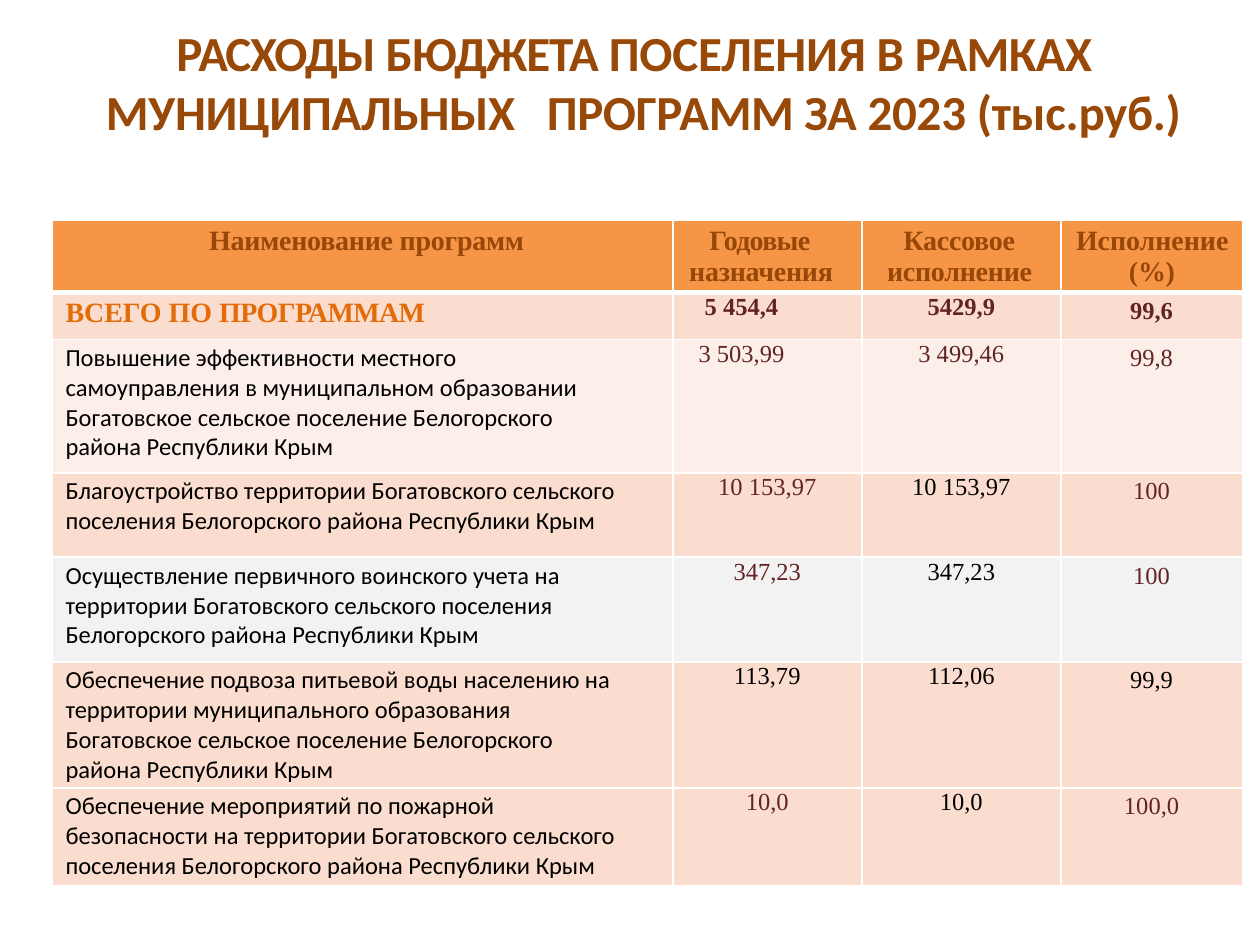
from dataclasses import dataclass

from lxml.etree import SubElement
from pptx import Presentation
from pptx.dml.color import RGBColor
from pptx.enum.text import MSO_ANCHOR, MSO_AUTO_SIZE, PP_ALIGN
from pptx.oxml.ns import qn
from pptx.util import Inches, Pt

GRID_UNIT = 0.1
SERIF, SANS = "Times New Roman", "Calibri"
BROWN, WINE, ORANGE, BLACK, WHITE = "974707", "622422", "E36C09", "000000", "FFFFFF"
HEADER_FILL, PEACH, PALE_PEACH, GRAY = "F79546", "FBDDCF", "FCEEE9", "F2F2F2"
COLUMNS = (49.2, 15, 15.8, 14.4)
HEADER_HEIGHT = 3.2


@dataclass
class Piece:
    text: str
    spacing: float = 0


@dataclass
class Style:
    font: str
    size: float
    color: str
    bold: bool = False


@dataclass
class Heading:
    pieces: list[Piece]
    left: float
    first_line: float


@dataclass
class Program:
    name: str
    amounts: tuple[str, str, str]
    colors: tuple[str, str, str]
    height: float
    fill: str = PEACH
    plan_margin: float = 0
    total: bool = False


HEADINGS = [
    Heading([Piece("Наименование программ", -0.1)], 12.4, 0),
    Heading([Piece("Годовые ", -0.4), Piece("назначения", -0.1)], 1.3, 1.6),
    Heading([Piece("Кассовое исполнение", -0.1)], 2, 1.3),
    Heading([Piece("Исполнение "), Piece("(%)", -0.1)], 5.4, -4.2),
]

PROGRAMS = [
    Program("ВСЕГО ПО ПРОГРАММАМ", ("5 454,4", "5429,9", "99,6"),
            (WINE, WINE, WINE), 3.7, plan_margin=4.1, total=True),
    Program("Повышение эффективности местного самоуправления в муниципальном образовании "
            "Богатовское сельское поселение Белогорского района Республики Крым",
            ("3 503,99", "3 499,46", "99,8"), (WINE, WINE, WINE), 10.6, PALE_PEACH, 4.1),
    Program("Благоустройство территории Богатовского сельского поселения "
            "Белогорского района Республики Крым",
            ("10 153,97", "10 153,97", "100"), (WINE, BLACK, WINE), 6.7),
    Program("Осуществление первичного воинского учета на территории Богатовского "
            "сельского поселения Белогорского района Республики Крым",
            ("347,23", "347,23", "100"), (WINE, BLACK, WINE), 8.3, GRAY),
    Program("Обеспечение подвоза питьевой воды населению на территории муниципального "
            "образования Богатовское сельское поселение Белогорского района Республики Крым",
            ("113,79", "112,06", "99,9"), (BLACK, BLACK, BLACK), 10),
    Program("Обеспечение мероприятий по пожарной безопасности на территории Богатовского "
            "сельского поселения Белогорского района Республики Крым",
            ("10,0", "10,0", "100,0"), (WINE, BLACK, WINE), 7.8),
]


def grid(units: float) -> int:
    return Inches(units * GRID_UNIT)


def rgb(color: str) -> RGBColor:
    return RGBColor.from_string(color)


def write(paragraph, pieces: list[Piece], style: Style) -> None:
    for piece in pieces:
        run = paragraph.add_run()
        run.text = piece.text
        run.font.name = style.font
        run.font.size = Pt(style.size)
        run.font.bold = style.bold
        run.font.color.rgb = rgb(style.color)
        if piece.spacing:
            run.font._element.set("spc", str(round(piece.spacing * 100)))


def indent(paragraph, left: float, first_line: float = 0) -> None:
    properties = paragraph._p.get_or_add_pPr()
    properties.set("marL", str(grid(left)))
    properties.set("indent", str(grid(first_line)))


def add_border(cell, side: str, width: float) -> None:
    line = SubElement(cell._tc.get_or_add_tcPr(), qn(f"a:ln{side}"), w=str(Pt(width)))
    fill = SubElement(line, qn("a:solidFill"))
    SubElement(fill, qn("a:srgbClr"), val=WHITE)


def prepare(table, row: int, column: int, fill: str, top: float = 0.4, right: float = 0):
    cell = table.cell(row, column)
    cell.margin_left = cell.margin_bottom = 0
    cell.margin_top, cell.margin_right = grid(top), grid(right)
    cell.vertical_anchor = MSO_ANCHOR.TOP
    add_border(cell, "L", 0.75 if column == 0 else 1)
    add_border(cell, "R", 0.75 if column == len(COLUMNS) - 1 else 1)
    add_border(cell, "T", {0: 0.5, 1: 3}.get(row, 1))
    add_border(cell, "B", 3 if row == 0 else 1)
    cell.fill.solid()
    cell.fill.fore_color.rgb = rgb(fill)
    return cell.text_frame.paragraphs[0]


def add_title(slide) -> None:
    title = slide.shapes.title
    title.left, title.top, title.width, title.height = map(grid, (8.3, 1.7, 85.7, 9.6))
    frame = title.text_frame
    frame.margin_left = frame.margin_right = frame.margin_bottom = 0
    frame.margin_top = grid(0.1)
    frame.word_wrap = True
    frame.auto_size = MSO_AUTO_SIZE.SHAPE_TO_FIT_TEXT
    frame.vertical_anchor = MSO_ANCHOR.TOP
    paragraph = frame.paragraphs[0]
    paragraph.alignment = PP_ALIGN.LEFT
    indent(paragraph, 0.1, 5.6)
    tabs = SubElement(paragraph._p.get_or_add_pPr(), qn("a:tabLst"))
    SubElement(tabs, qn("a:tab"), pos=str(grid(34.6)), algn="l")
    pieces = [Piece("РАСХОДЫ ", -0.7), Piece("БЮДЖЕТА ", -0.5), Piece("ПОСЕЛЕНИЯ В ", -0.1),
              Piece("РАМКАХ ", -0.3), Piece("МУНИЦИПАЛЬНЫХ\t", -0.1),
              Piece("ПРОГРАММ ЗА ", -0.2), Piece("2023 (тыс.руб.)", -0.1)]
    write(paragraph, pieces, Style(SANS, 28, "984807", True))


def add_program(table, row: int, program: Program) -> None:
    if program.total:
        name = prepare(table, row, 0, program.fill)
        write(name, [Piece("ВСЕГО ПО "), Piece("ПРОГРАММАМ", -0.3)],
              Style(SERIF, 16, ORANGE, True))
    else:
        name = prepare(table, row, 0, program.fill, 0.3, 3.9)
        write(name, [Piece(program.name)], Style(SANS, 14, BLACK))
    indent(name, 1)
    for column, (amount, color) in enumerate(zip(program.amounts, program.colors), 1):
        is_percent = column == 3
        margin = program.plan_margin if column == 1 else 0
        value = prepare(table, row, column, program.fill, 0.4 if is_percent else 0, margin)
        value.alignment = PP_ALIGN.CENTER
        if not is_percent:
            value.line_spacing = Pt(16.1)
        write(value, [Piece(amount)], Style(SERIF, 14, color, program.total))


def add_budget_table(slide) -> None:
    heights = [HEADER_HEIGHT, *(program.height for program in PROGRAMS)]
    table = slide.shapes.add_table(len(heights), len(COLUMNS), grid(4.2), grid(17.5),
                                   grid(sum(COLUMNS)), grid(sum(heights))).table
    table.first_row = table.horz_banding = False
    for column, width in zip(table.columns, COLUMNS):
        column.width = grid(width)
    for row, height in zip(table.rows, heights):
        row.height = grid(height)
    for column, heading in enumerate(HEADINGS):
        paragraph = prepare(table, 0, column, HEADER_FILL)
        indent(paragraph, heading.left, heading.first_line)
        write(paragraph, heading.pieces, Style(SERIF, 16, BROWN, True))
    for row, program in enumerate(PROGRAMS, 1):
        add_program(table, row, program)


def main() -> None:
    presentation = Presentation()
    presentation.slide_width, presentation.slide_height = grid(100), grid(75)
    slide = presentation.slides.add_slide(presentation.slide_layouts[5])
    add_title(slide)
    add_budget_table(slide)
    presentation.save("out.pptx")


if __name__ == "__main__":
    main()
